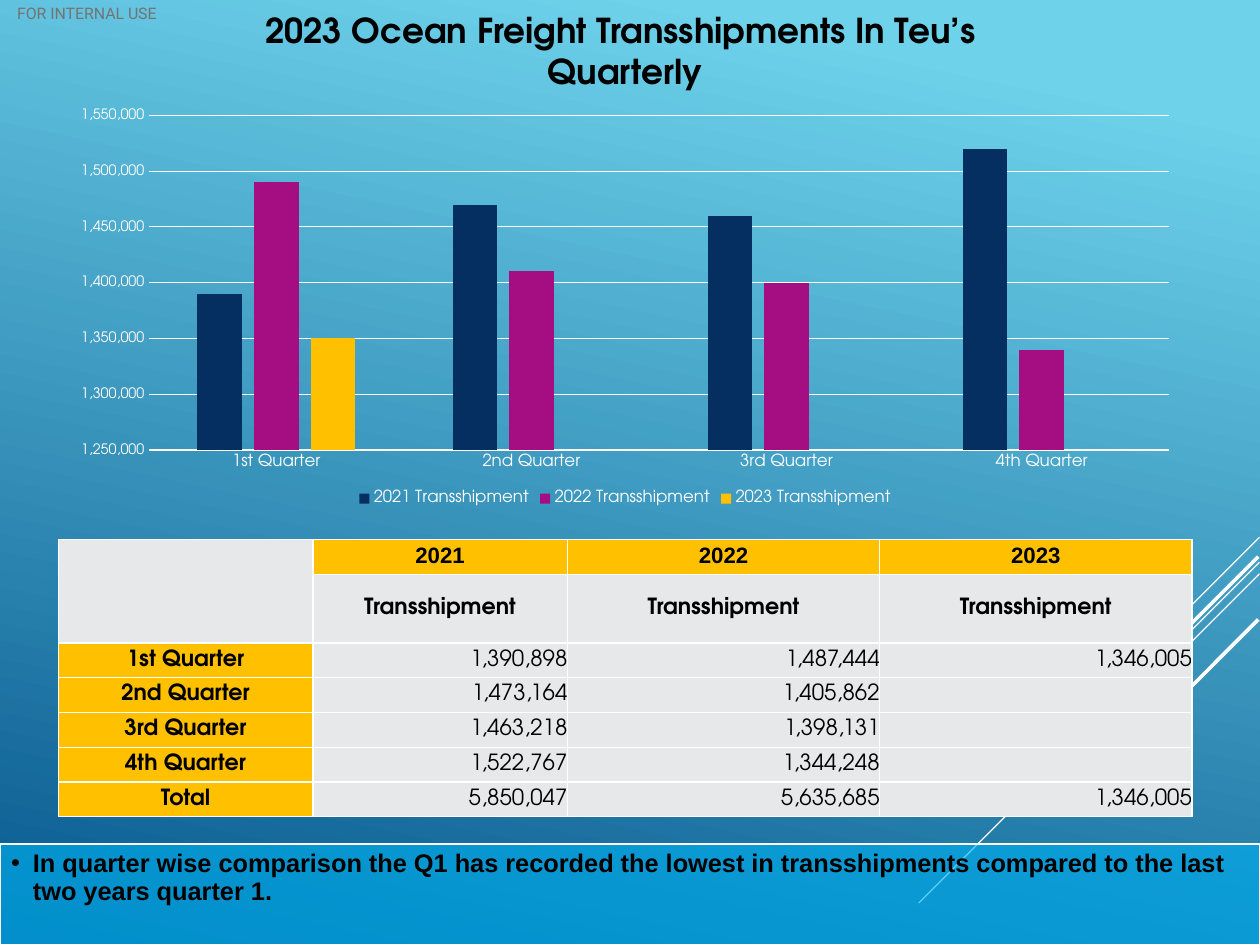
import pptx
import pptx.util
import pptx.chart.data
import pptx.dml.color
import pptx.enum.chart
import pptx.enum.shapes
import pptx.enum.text
import pptx.oxml
import pptx.oxml.ns
from dataclasses import dataclass
from lxml import etree

Pt = pptx.util.Pt
Align = pptx.enum.text.PP_ALIGN
Anchor = pptx.enum.text.MSO_ANCHOR
qn = pptx.oxml.ns.qn


@dataclass(frozen=True)
class Theme:
    sky: str = "6ED2EB"
    sea: str = "06588E"
    white: str = "FFFFFF"
    black: str = "000000"
    gray: str = "747474"
    pale: str = "E7E8EA"
    gold: str = "FFC000"
    navy: str = "052F61"
    plum: str = "A50E82"
    cyan: str = "00B0F0"
    main: str = "TeX Gyre Adventor"
    plain: str = "Arial"
    mark: str = "Roboto"
    title: float = 21.6
    note: float = 16
    cell: float = 14
    label: float = 10.5
    tag: float = 10
    scale: float = 9


T = Theme()
WIDE, HIGH = 793.75, 595.25
LEFT, SPAN = 36.72, 714.24
TIGHT = 0.93
YEARS = ["2021", "2022", "2023"]
ROWS = ["1st Quarter", "2nd Quarter", "3rd Quarter", "4th Quarter"]
DATA = [
    [1390898, 1473164, 1463218, 1522767],
    [1487444, 1405862, 1398131, 1344248],
    [1346005, None, None, None],
]
RAYS = [
    (793.44, 338.4, 65.5, 0.75),
    (793.44, 354.2, 214.6, 0.75),
    (793.44, 361.4, 136.1, 0.75),
    (792.7, 350.6, 124.6, 2.25),
    (792.7, 390.2, 90.7, 2.25),
]


def rgb(tone):
    return pptx.dml.color.RGBColor.from_string(tone)


def paint(fill, tone):
    fill.solid()
    fill.fore_color.rgb = rgb(tone)


def stroke(line, width):
    paint(line.fill, T.white)
    line.width = Pt(width)


def style(font, size, tone, face=T.main, bold=False):
    font.size = Pt(size)
    font.color.rgb = rgb(tone)
    font.name = face
    font.bold = bold


def add_back(slide):
    fill = slide.background.fill
    fill.gradient()
    fill.gradient_angle = 258
    for stop, tone, place in zip(fill.gradient_stops, (T.sky, T.sea), (0.1, 1)):
        stop.color.rgb = rgb(tone)
        stop.position = place


def add_ray(slide, x, y, run, width):
    kind = pptx.enum.shapes.MSO_CONNECTOR.STRAIGHT
    ray = slide.shapes.add_connector(kind, Pt(x), Pt(y), Pt(x - run), Pt(y + run))
    stroke(ray.line, width)
    etree.SubElement(ray._element.spPr, qn("a:effectLst"))


def add_text(slide, box, text, size, tone, face, bold=False, lead=1.0):
    frame = slide.shapes.add_textbox(*map(Pt, box)).text_frame
    frame.word_wrap = True
    frame.vertical_anchor = Anchor.MIDDLE
    frame.margin_left = frame.margin_right = 0
    frame.margin_top = frame.margin_bottom = 0
    para = frame.paragraphs[0]
    para.text = text
    para.alignment = Align.CENTER
    para.line_spacing = lead
    style(para.font, size, tone, face, bold)


def add_chart(slide):
    data = pptx.chart.data.CategoryChartData(number_format="#,##0")
    data.categories = ROWS
    for year, vals in zip(YEARS, DATA):
        data.add_series(f"{year} Transshipment", [val and round(val, -4) for val in vals])
    kind = pptx.enum.chart.XL_CHART_TYPE.COLUMN_CLUSTERED
    box = map(Pt, (LEFT, 63.4, SPAN, 258.5))
    chart = slide.shapes.add_chart(kind, *box, data).chart
    style(chart.font, T.tag, T.white)
    chart.has_title = False
    chart.has_legend = True
    chart.legend.position = pptx.enum.chart.XL_LEGEND_POSITION.BOTTOM
    chart.legend.include_in_layout = False
    style(chart.legend.font, T.label, T.white)

    plot = chart.plots[0]
    plot.gap_width = 219
    plot.overlap = -27
    plot.vary_by_categories = False
    for part, tone in zip(plot.series, (T.navy, T.plum, T.gold)):
        paint(part.format.fill, tone)

    none = pptx.enum.chart.XL_TICK_MARK.NONE
    base, axis = chart.category_axis, chart.value_axis
    for item, size in ((base, T.label), (axis, T.scale)):
        item.major_tick_mark = item.minor_tick_mark = none
        style(item.tick_labels.font, size, T.white)
    stroke(base.format.line, 0.75)
    axis.format.line.fill.background()
    axis.minimum_scale = 1250000
    axis.maximum_scale = 1550000
    axis.major_unit = 50000
    axis.tick_labels.number_format = "#,##0"
    axis.tick_labels.number_format_is_linked = False
    stroke(axis.major_gridlines.format.line, 0.75)


def add_edges(cell):
    props = cell._tc.get_or_add_tcPr()
    for spot, side in enumerate(("lnL", "lnR", "lnT", "lnB")):
        edge = etree.Element(qn(f"a:{side}"), w=str(Pt(1)))
        fill = etree.SubElement(edge, qn("a:solidFill"))
        etree.SubElement(fill, qn("a:srgbClr"), val=T.white)
        props.insert(spot, edge)


def set_cell(cell, text, tone, face, bold, align):
    paint(cell.fill, tone)
    add_edges(cell)
    cell.margin_left = cell.margin_right = 0
    cell.margin_top = cell.margin_bottom = 0
    cell.vertical_anchor = Anchor.MIDDLE
    para = cell.text_frame.paragraphs[0]
    para.text = text
    para.alignment = align
    para.line_spacing = TIGHT
    style(para.font, T.cell, T.black, face, bold)


def add_table(slide):
    sums = [sum(val or 0 for val in vals) for vals in DATA]
    body = [[name, *vals] for name, *vals in zip(ROWS, *DATA)]
    body.append(["Total", *sums])
    grid = [["", *YEARS], [""] + ["Transshipment"] * 3]
    grid += [[row[0]] + [f"{val:,}" if val else "" for val in row[1:]] for row in body]

    box = map(Pt, (LEFT, 339.8, SPAN, 174.8))
    table = slide.shapes.add_table(len(grid), 4, *box).table
    table.first_row = table.horz_banding = False
    for col, width in zip(table.columns, (160.4, 160.4, 196.72, 196.72)):
        col.width = Pt(width)
    for r, row in enumerate(grid):
        table.rows[r].height = Pt(43.4 if r == 1 else 21.9)
        for c, text in enumerate(row):
            head = r < 2 or c == 0
            tone = T.gold if (r == 0) != (c == 0 and r != 1) else T.pale
            face = T.plain if r == 0 else T.main
            align = Align.CENTER if head else Align.RIGHT
            set_cell(table.cell(r, c), text, tone, face, head, align)
    table.cell(0, 0).merge(table.cell(1, 0))


def add_note(slide, text):
    kind = pptx.enum.shapes.MSO_SHAPE.RECTANGLE
    note = slide.shapes.add_shape(kind, 0, Pt(531.7), Pt(WIDE), Pt(HIGH - 531.7))
    note.shadow.inherit = False
    paint(note.fill, T.cyan)
    tint = note._element.spPr.find(".//" + qn("a:srgbClr"))
    etree.SubElement(tint, qn("a:alpha"), val="63000")
    stroke(note.line, 0.75)
    frame = note.text_frame
    frame.word_wrap = True
    frame.vertical_anchor = Anchor.TOP
    para = frame.paragraphs[0]
    para.text = text
    para.alignment = Align.LEFT
    para.line_spacing = TIGHT
    props = para._p.get_or_add_pPr()
    props.set("marL", str(Pt(13.7)))
    props.set("indent", str(Pt(-13.7)))
    tint = etree.SubElement(props, qn("a:buClr"))
    etree.SubElement(tint, qn("a:srgbClr"), val=T.black)
    etree.SubElement(props, qn("a:buFont"), typeface=T.plain)
    etree.SubElement(props, qn("a:buChar"), char="•")
    style(para.font, T.note, T.black, T.plain, True)


def main():
    deck = pptx.Presentation()
    deck.slide_width, deck.slide_height = Pt(WIDE), Pt(HIGH)
    slide = deck.slides.add_slide(deck.slide_layouts[6])
    add_back(slide)
    for ray in RAYS:
        add_ray(slide, *ray)
    mark = "FOR INTERNAL USE"
    add_text(slide, (0, 0, 109.4, 18), mark, T.tag, T.gray, T.mark, lead=TIGHT)
    title = "2023 Ocean Freight Transshipments In Teu’s \vQuarterly"
    add_text(slide, (LEFT, 0, SPAN, 63.4), title, T.title, T.black, T.main, True)
    add_note(slide, "In quarter wise comparison the Q1 has recorded the lowest in "
             "transshipments compared to the last two years quarter 1.")
    add_table(slide)
    add_chart(slide)
    deck.save("out.pptx")


if __name__ == "__main__":
    main()
